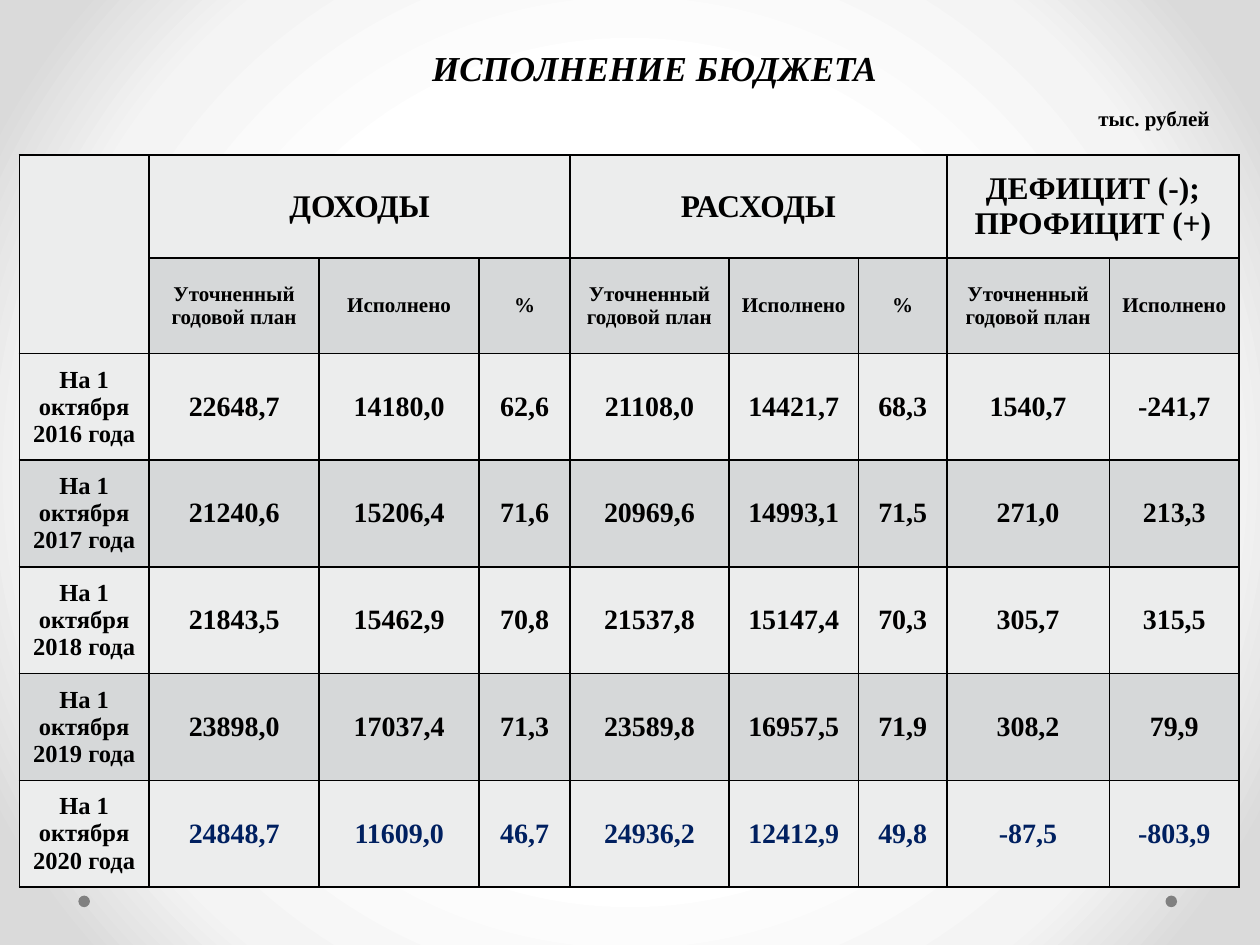
from pptx import Presentation
from pptx.dml.color import RGBColor
from pptx.enum.shapes import MSO_SHAPE
from pptx.enum.text import MSO_ANCHOR, MSO_AUTO_SIZE, PP_ALIGN
from pptx.oxml import parse_xml
from pptx.oxml.ns import nsdecls
from pptx.util import Pt

BLACK = RGBColor(0x00, 0x00, 0x00)
NAVY = RGBColor(0x00, 0x20, 0x60)
GRAY = RGBColor(0x80, 0x80, 0x80)
LIGHT = RGBColor(0xEC, 0xED, 0xED)
DARK = RGBColor(0xD6, 0xD8, 0xD9)
BACKGROUND = [
    (50, RGBColor(0xFF, 0xFF, 0xFF)),
    (76, RGBColor(0xF4, 0xF4, 0xF4)),
    (92, RGBColor(0xDA, 0xDA, 0xDA)),
]

COL_WIDTHS = [74.2, 97.2, 91.4, 52, 90.7, 74.2, 50.4, 92.9, 74.2]
ROW_HEIGHTS = [59, 54.5] + [61] * 5
GROUPS = [(1, 3, "ДОХОДЫ"), (4, 6, "РАСХОДЫ"), (7, 8, "ДЕФИЦИТ (-);\nПРОФИЦИТ (+)")]
PLAN, DONE = "Уточненный годовой план", "Исполнено"
SUBHEADS = [PLAN, DONE, "%", PLAN, DONE, "%", PLAN, DONE]
FIGURES = {
    2016: ["22648,7", "14180,0", "62,6", "21108,0", "14421,7", "68,3", "1540,7", "-241,7"],
    2017: ["21240,6", "15206,4", "71,6", "20969,6", "14993,1", "71,5", "271,0", "213,3"],
    2018: ["21843,5", "15462,9", "70,8", "21537,8", "15147,4", "70,3", "305,7", "315,5"],
    2019: ["23898,0", "17037,4", "71,3", "23589,8", "16957,5", "71,9", "308,2", "79,9"],
    2020: ["24848,7", "11609,0", "46,7", "24936,2", "12412,9", "49,8", "-87,5", "-803,9"],
}


def write(tf, text, size, color=BLACK, italic=False, align=PP_ALIGN.CENTER):
    """Fill a text frame with bold text, one paragraph per line."""
    for i, line in enumerate(text.split("\n")):
        p = tf.paragraphs[0] if i == 0 else tf.add_paragraph()
        p.alignment = align
        r = p.add_run()
        r.text = line
        r.font.name = "Times New Roman"
        r.font.size = Pt(size)
        r.font.bold = True
        r.font.italic = italic
        r.font.color.rgb = color


prs = Presentation()
prs.slide_width, prs.slide_height = Pt(720), Pt(540)
s = prs.slides.add_slide(prs.slide_layouts[6])

# Background: circular gradient from the centre
fill = s.background.fill
fill.gradient()
grad = s.background._cSld.bg.bgPr.find(".//{*}gradFill")
for child in list(grad):
    grad.remove(child)
stops = "".join(
    f'<a:gs pos="{pos * 1000}"><a:srgbClr val="{color}"/></a:gs>' for pos, color in BACKGROUND
)
grad.append(parse_xml(f'<a:gsLst {nsdecls("a")}>{stops}</a:gsLst>'))
grad.append(parse_xml(
    f'<a:path {nsdecls("a")} path="circle">'
    '<a:fillToRect l="50000" t="50000" r="50000" b="50000"/></a:path>'
))

# Footer dots
for left in (666, 44.8):
    dot = s.shapes.add_shape(MSO_SHAPE.OVAL, Pt(left), Pt(511.8), Pt(6.6), Pt(6.6))
    dot.shadow.inherit = False
    dot.fill.solid()
    dot.fill.fore_color.rgb = GRAY
    dot.line.fill.background()

# Budget table
tbl = s.shapes.add_table(
    len(ROW_HEIGHTS), len(COL_WIDTHS), Pt(11), Pt(88.5),
    Pt(sum(COL_WIDTHS)), Pt(sum(ROW_HEIGHTS)),
).table
for col, width in zip(tbl.columns, COL_WIDTHS):
    col.width = Pt(width)
for row, height in zip(tbl.rows, ROW_HEIGHTS):
    row.height = Pt(height)

for i, row in enumerate(tbl.rows):
    for cell in row.cells:
        cell.vertical_anchor = MSO_ANCHOR.MIDDLE
        cell.margin_left = cell.margin_right = Pt(5)
        tc_pr = cell._tc.get_or_add_tcPr()
        for side in ("lnL", "lnR", "lnT", "lnB"):
            tc_pr.append(parse_xml(
                f'<a:{side} {nsdecls("a")} w="{Pt(1)}"><a:solidFill>'
                f'<a:srgbClr val="{BLACK}"/></a:solidFill></a:{side}>'
            ))
        cell.fill.solid()
        cell.fill.fore_color.rgb = DARK if i % 2 else LIGHT

tbl.cell(0, 0).merge(tbl.cell(1, 0))
for first, last, heading in GROUPS:
    tbl.cell(0, first).merge(tbl.cell(0, last))
    write(tbl.cell(0, first).text_frame, heading, 18)
for j, subhead in enumerate(SUBHEADS, 1):
    write(tbl.cell(1, j).text_frame, subhead, 12)
for i, (year, values) in enumerate(FIGURES.items(), 2):
    write(tbl.cell(i, 0).text_frame, f"На 1 октября\n{year} года", 14)
    for j, value in enumerate(values, 1):
        write(tbl.cell(i, j).text_frame, value, 16, color=NAVY if year == 2020 else BLACK)

# Title and unit of measure
for box, text, style in [
    ((224, 23, 300, 31.5), "ИСПОЛНЕНИЕ БЮДЖЕТА", dict(size=20, italic=True)),
    ((620.6, 57, 85, 21.8), "тыс. рублей", dict(size=12, align=PP_ALIGN.LEFT)),
]:
    tf = s.shapes.add_textbox(*map(Pt, box)).text_frame
    tf.word_wrap = True
    tf.auto_size = MSO_AUTO_SIZE.SHAPE_TO_FIT_TEXT
    write(tf, text, **style)

prs.save("out.pptx")
